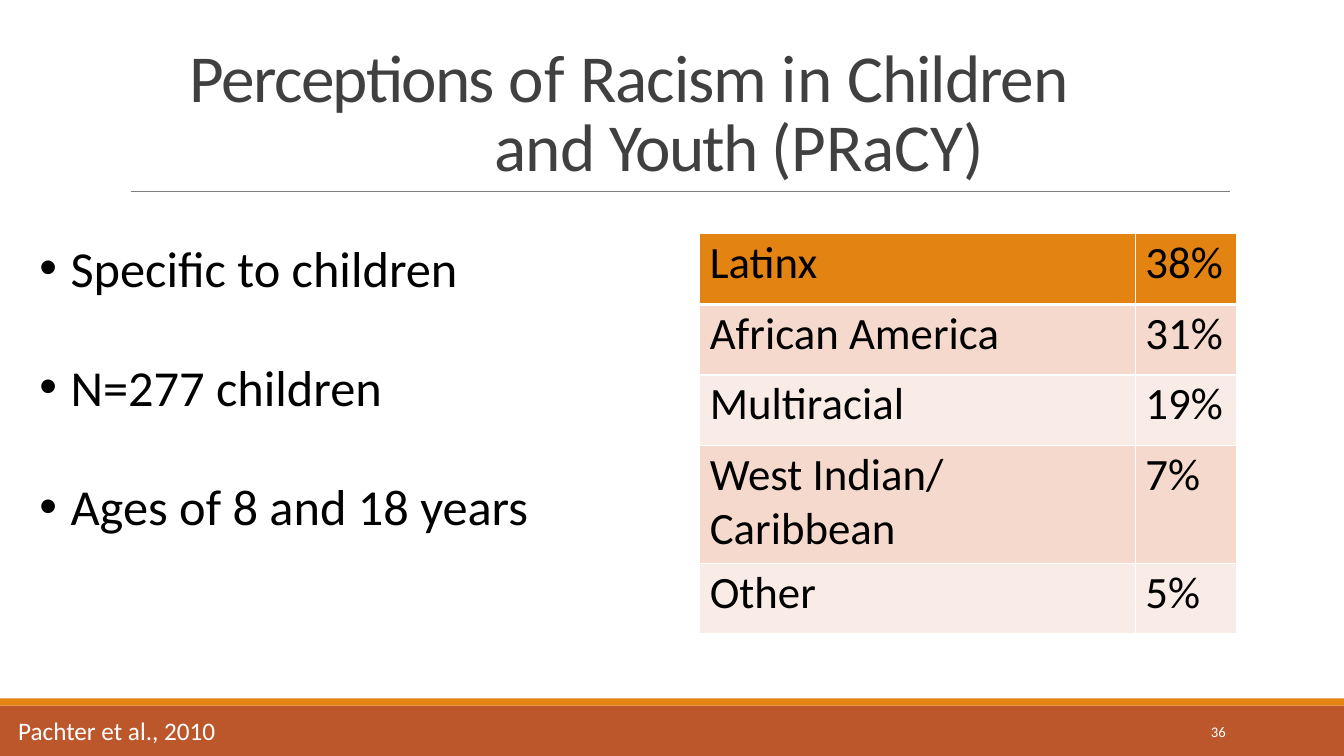
from dataclasses import dataclass

from pptx import Presentation
from pptx.dml.color import RGBColor
from pptx.enum.shapes import MSO_CONNECTOR as Connector, MSO_SHAPE as Shape
from pptx.enum.text import MSO_ANCHOR as Anchor, MSO_AUTO_SIZE as AutoSize, PP_ALIGN as Align
from pptx.oxml.ns import qn
from pptx.util import Inches, Pt
from lxml.etree import SubElement


@dataclass(frozen=True)
class Theme:
    font: str = "Calibri"
    ink: str = "000000"
    title: str = "404040"
    rule: str = "7E7E7E"
    white: str = "FFFFFF"
    rust: str = "BC572C"
    orange: str = "E38312"
    bands: tuple = ("F5D9CC", "F9ECE7")
    title_size: float = 48
    list_size: float = 36
    table_size: float = 32
    source_size: float = 18
    number_size: float = 10.5


THEME = Theme()

TITLE = [("Perceptions ", -1.1), ("of ", 0), ("Racism ", -0.7), ("in ", 0),
         ("Children ", -0.8), ("and ", -0.5), ("Youth ", -1.4), ("(PRaCY)", -0.1)]
FACTS = ["Specific to children", "N=277 children", "Ages of 8 and 18 years"]
SHARES = [("Latinx", "38%"), ("African America", "31%"), ("Multiracial", "19%"),
          ("West Indian/ Caribbean", "7%"), ("Other", "5%")]


def rgb(code):
    return RGBColor.from_string(code)


def style(font, size, color):
    font.name = THEME.font
    font.size = Pt(size)
    font.color.rgb = rgb(color)


def set_frame(frame, top=0):
    frame.word_wrap = True
    frame.auto_size = AutoSize.NONE
    frame.vertical_anchor = Anchor.TOP
    frame.margin_left = frame.margin_right = frame.margin_bottom = 0
    frame.margin_top = Inches(top)


def set_indent(para, left, first):
    props = para._p.get_or_add_pPr()
    props.set("marL", str(Inches(left)))
    props.set("indent", str(Inches(first)))
    return props


def add_text(page, box, text, size, color, line):
    frame = page.shapes.add_textbox(*map(Inches, box)).text_frame
    set_frame(frame)
    frame.text = text
    para = frame.paragraphs[0]
    para.line_spacing = Pt(line)
    style(para.runs[0].font, size, color)


def add_band(page, box, color):
    band = page.shapes.add_shape(Shape.RECTANGLE, *map(Inches, box))
    band.shadow.inherit = False
    band.fill.solid()
    band.fill.fore_color.rgb = rgb(color)
    band.line.fill.background()


def add_footer(page, left, top, width, height):
    stripe = 0.07
    add_band(page, (left, top, width, height), THEME.rust)
    add_band(page, (left, top - stripe, width, stripe), THEME.orange)
    add_text(page, (left + 0.18, top + 0.14, 2.1, 0.28), "Pachter et al., 2010",
             THEME.source_size, THEME.white, 18.1)
    add_text(page, (left + 12.01, top + 0.19, 0.25, 0.17), "36",
             THEME.number_size, THEME.white, 11)


def add_title(page, left, top, width, height):
    title = page.shapes.title
    title.left, title.top = Inches(left), Inches(top)
    title.width, title.height = Inches(width), Inches(height)
    frame = title.text_frame
    set_frame(frame, top=0.16)
    para = frame.paragraphs[0]
    set_indent(para, 3.03, -3.02)
    para.alignment = Align.LEFT
    para.line_spacing = Pt(49)
    for word, spacing in TITLE:
        span = para.add_run()
        span.text = word
        style(span.font, THEME.title_size, THEME.title)
        span.font._element.set("spc", str(round(spacing * 100)))

    # Rule under the title
    start, level = left - 0.57, top + 1.59
    rule = page.shapes.add_connector(Connector.STRAIGHT, Inches(start), Inches(level),
                                     Inches(start + 10.9), Inches(level))
    rule.line.color.rgb = rgb(THEME.rule)
    rule.line.width = Pt(0.5)
    SubElement(rule._element.spPr, qn("a:effectLst"))


def add_facts(page, left, top, width, height):
    box = page.shapes.add_textbox(*map(Inches, (left, top, width, height)))
    frame = box.text_frame
    set_frame(frame, top=0.02)
    for index, fact in enumerate(FACTS):
        para = frame.add_paragraph() if index else frame.paragraphs[0]
        para.text = fact
        props = set_indent(para, 0.33, -0.31)
        SubElement(props, qn("a:buFont"), typeface="Arial")
        SubElement(props, qn("a:buChar"), char="•")
        if index:
            para.space_before = Pt(42)
        style(para.runs[0].font, THEME.list_size, THEME.ink)


def set_borders(cell, top, bottom):
    props = cell._tc.get_or_add_tcPr()
    for side, width in (("L", 1), ("R", 1), ("T", top), ("B", bottom)):
        line = SubElement(props, qn(f"a:ln{side}"), w=str(Pt(width)))
        fill = SubElement(line, qn("a:solidFill"))
        SubElement(fill, qn("a:srgbClr"), val=THEME.white)


def add_shares(page, left, top, width, height):
    value_width, row_height = 1, 0.7
    frame = page.shapes.add_table(len(SHARES), 2, *map(Inches, (left, top, width, height)))
    table = frame.table
    table.first_row = table.horz_banding = False
    table.columns[0].width = Inches(width - value_width)
    table.columns[1].width = Inches(value_width)
    for index, (row, texts) in enumerate(zip(table.rows, SHARES)):
        two_lines = "/" in texts[0]
        row.height = Inches(height - row_height * (len(SHARES) - 1) if two_lines else row_height)
        color = THEME.bands[(index - 1) % 2] if index else THEME.orange
        for cell, text in zip(row.cells, texts):
            set_borders(cell, top=3 if index == 1 else 1, bottom=1 if index else 3)
            cell.fill.solid()
            cell.fill.fore_color.rgb = rgb(color)
            cell.margin_left, cell.margin_right = Inches(0.1), Inches(0.05)
            cell.margin_top, cell.margin_bottom = Inches(0.02), 0
            cell.text = text
            style(cell.text_frame.paragraphs[0].runs[0].font, THEME.table_size, THEME.ink)


def main():
    deck = Presentation()
    deck.slide_width, deck.slide_height = Inches(13.33), Inches(7.5)
    page = deck.slides.add_slide(deck.slide_layouts[5])
    page.background.fill.solid()
    page.background.fill.fore_color.rgb = rgb(THEME.white)
    add_footer(page, 0, 7, 13.33, 0.5)
    add_title(page, 1.87, 0.31, 9.67, 1.51)
    add_facts(page, 0.37, 2.33, 4.88, 3.03)
    add_shares(page, 6.94, 2.32, 5.32, 3.97)
    deck.save("out.pptx")


if __name__ == "__main__":
    main()
